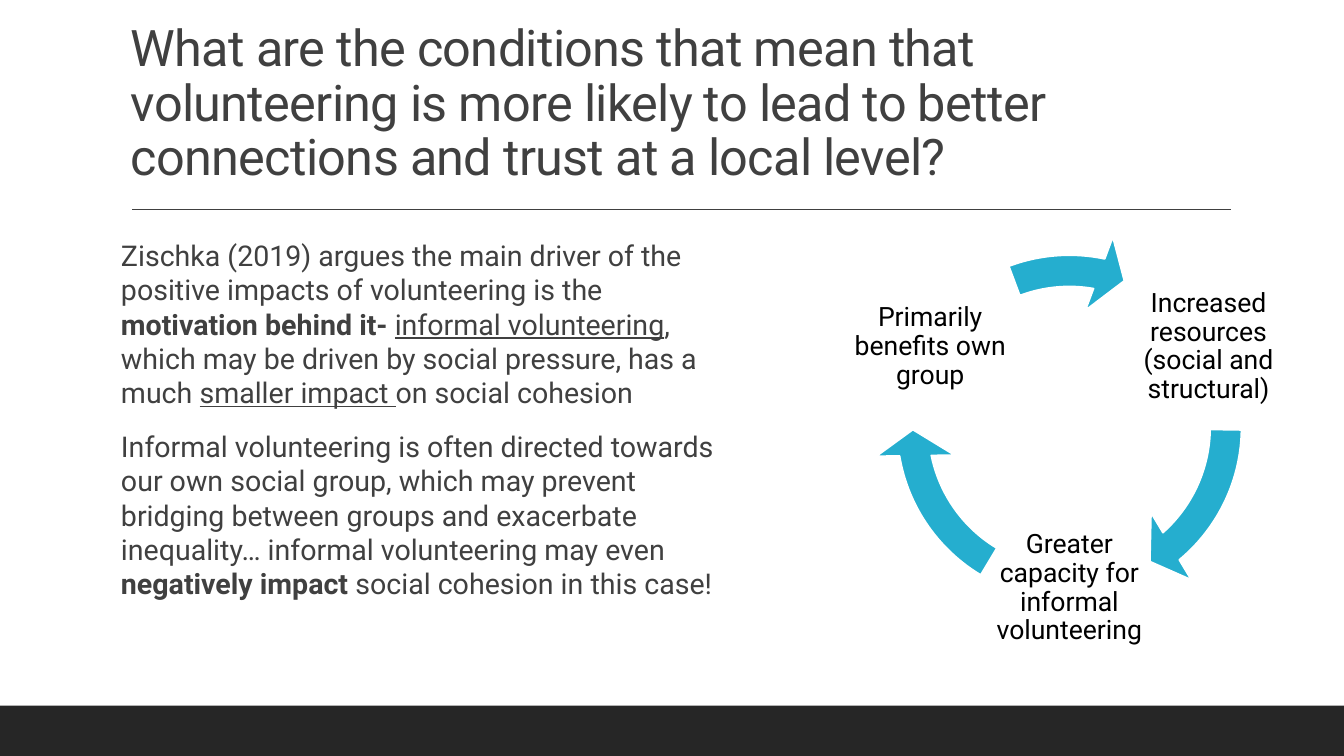
from math import cos, radians, sin

from lxml import etree
from pptx import Presentation
from pptx.dml.color import RGBColor
from pptx.enum.shapes import MSO_CONNECTOR, MSO_SHAPE
from pptx.enum.text import MSO_ANCHOR, PP_ALIGN
from pptx.oxml.ns import qn
from pptx.util import Cm, Pt

COLORS = {"text": "404040", "bar": "262626", "arrow": "25AECF",
          "label": "000000", "white": "FFFFFF"}
FONT = "Roboto"
WIDTH, HEIGHT = 33.87, 19.05

TITLE = ("What are the conditions that mean that volunteering is more likely "
         "to lead to better connections and trust at a local level?")
# Each run: text and style ("b" bold, "u" underlined)
BODY = [
    [("Zischka (2019) argues the main driver of the positive impacts of volunteering is the ", ""),
     ("motivation behind it- ", "b"),
     ("informal volunteering", "u"),
     (", which may be driven by social pressure, has a much ", ""),
     ("smaller impact ", "u"),
     ("on social cohesion", "")],
    [("Informal volunteering is often directed towards our own social group, which may prevent "
      "bridging between groups and exacerbate inequality… informal volunteering may even ", ""),
     ("negatively impact ", "b"),
     ("social cohesion in this case!", "")],
]
# Each step: label, its angle on the ring, end and start of the arrow after it
STEPS = [
    ("Increased resources (social and structural)", -30, 29.66, 0.51),
    ("Greater capacity for informal volunteering", 90, 101.74, 72.59),
    ("Primarily benefits own group", 210, 168.58, 149.66),
]


def rgb(name):
    return RGBColor.from_string(COLORS[name])


def style(p, size, color):
    p.font.name = FONT
    p.font.size = Pt(size)
    p.font.color.rgb = rgb(color)


def add_text_frame(s, x, y, w, h, inset_x, inset_y, anchor):
    tf = s.shapes.add_textbox(Cm(x), Cm(y), Cm(w), Cm(h)).text_frame
    tf.word_wrap = True
    tf.vertical_anchor = anchor
    tf.margin_left = tf.margin_right = Cm(inset_x)
    tf.margin_top = tf.margin_bottom = Cm(inset_y)
    return tf


def add_frame(s, bar_height=1.27):
    # Footer bar
    bar = s.shapes.add_shape(MSO_SHAPE.RECTANGLE, 0, Cm(HEIGHT - bar_height),
                             Cm(WIDTH), Cm(bar_height))
    bar.shadow.inherit = False
    bar.fill.solid()
    bar.fill.fore_color.rgb = rgb("bar")
    bar.line.fill.background()


def add_title(s, x, y, w, h):
    tf = add_text_frame(s, x, y, w, h, 0.25, 0.13, MSO_ANCHOR.BOTTOM)
    p = tf.paragraphs[0]
    p.line_spacing = 0.9
    style(p, 36, "text")
    r = p.add_run()
    r.text = TITLE
    r.font._element.set("spc", "-50")

    # Rule below the title
    rule_y = Cm(y + h + 0.45)
    rule = s.shapes.add_connector(MSO_CONNECTOR.STRAIGHT, Cm(x + 0.28), rule_y,
                                  Cm(x + w + 0.02), rule_y)
    rule.line.color.rgb = rgb("text")
    rule.line.width = Pt(1)
    etree.SubElement(rule._element.spPr, qn("a:effectLst"))


def add_body(s, x, y, w, h):
    tf = add_text_frame(s, x, y, w, h, 0, 0.13, MSO_ANCHOR.TOP)
    for i, runs in enumerate(BODY):
        p = tf.add_paragraph() if i else tf.paragraphs[0]
        p.space_before, p.space_after = Pt(12), Pt(2)
        style(p, 20.4, "text")
        for text, mark in runs:
            r = p.add_run()
            r.text = text
            if mark == "b":
                r.font.bold = True
            elif mark == "u":
                r.font.underline = True


def add_cycle(s, x, y, size, label_size=4.17, radius=4.05):
    cx, cy = x + size / 2, y + size / 2
    for text, angle, end, start in STEPS:
        # Label centred on the ring
        left = cx + radius * cos(radians(angle)) - label_size / 2
        top = cy + radius * sin(radians(angle)) - label_size / 2
        tf = add_text_frame(s, left, top, label_size, label_size, 0.08, 0.08,
                            MSO_ANCHOR.MIDDLE)
        p = tf.paragraphs[0]
        p.text = text
        p.alignment = PP_ALIGN.CENTER
        p.line_spacing = 0.9
        style(p, 19, "label")

        # Arrow to the next step
        arrow = s.shapes.add_shape(MSO_SHAPE.CIRCULAR_ARROW, Cm(x), Cm(y), Cm(size), Cm(size))
        for i, value in enumerate((0.08, 5.76, end, start, 0.1)):
            arrow.adjustments[i] = value
        arrow.shadow.inherit = False
        arrow.fill.solid()
        arrow.fill.fore_color.rgb = rgb("arrow")
        arrow.line.color.rgb = rgb("white")
        arrow.line.width = Pt(1.25)


def main():
    prs = Presentation()
    prs.slide_width, prs.slide_height = Cm(WIDTH), Cm(HEIGHT)
    s = prs.slides.add_slide(prs.slide_layouts[6])
    add_frame(s)
    add_title(s, 3.05, 0.79, 27.94, 4.04)
    add_body(s, 3.05, 5.87, 15.39, 10.44)
    add_cycle(s, 22.02, 5.84, 9.86)
    prs.save("out.pptx")


if __name__ == "__main__":
    main()
